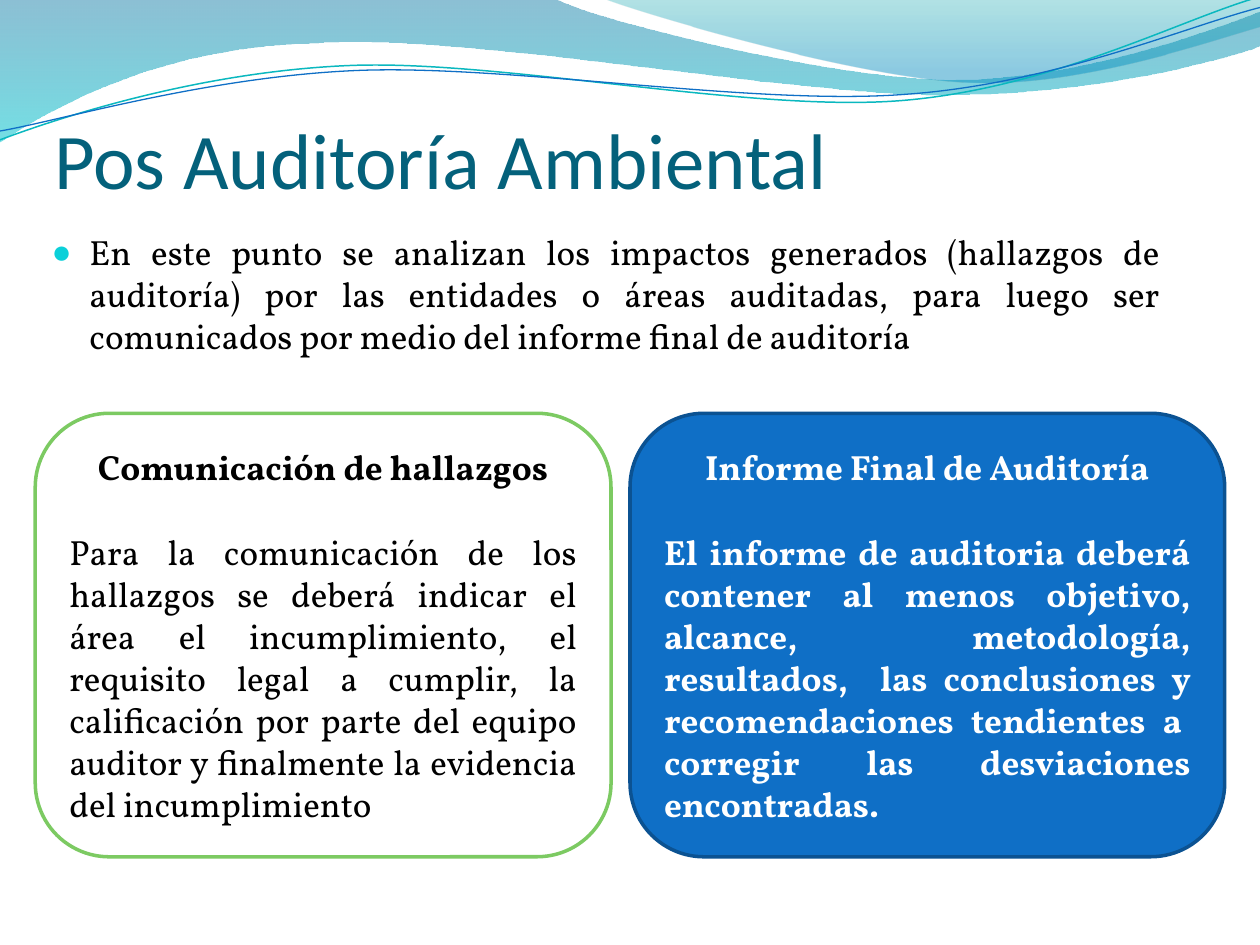
from math import cos, radians, sin
from lxml.etree import SubElement
from pptx import Presentation
from pptx.dml.color import RGBColor
from pptx.enum.shapes import MSO_SHAPE
from pptx.enum.text import MSO_ANCHOR, MSO_AUTO_SIZE, PP_ALIGN
from pptx.oxml.ns import qn
from pptx.util import Inches, Pt

COLORS = {
    "title": "04617B", "text": "000000", "white": "FFFFFF", "bullet": "0BD0D9",
    "green": "7CCA62", "blue": "0F6FC6", "navy": "0B5292", "teal": "0AB8BF",
    "sea": "0074A1", "cyan": "00C6CF", "lagoon": "00A1A9", "sky": "008BBF",
}

# Wave outlines: a start point, then lines (2 numbers) and cubic curves (6 numbers)
BACK_WAVE = [(0, 0), (4.4, -0.01), (4.76, 0.17, 6.64, 0.63, 7.58, 0.63),
             (8.53, 0.63, 9.58, 0.26, 10, 0.09), (10.01, 0.36),
             (9.83, 0.44, 8.7, 0.76, 7.46, 0.75), (6.22, 0.75, 3.82, 0.28, 2.57, 0.34),
             (1.29, 0.36, 0.46, 0.83, -0.01, 1.13), (0, 0)]
FRONT_WAVE = [(4.79, -0.01), (5.09, 0.11, 6.82, 0.62, 7.69, 0.65),
              (8.56, 0.69, 9.61, 0.32, 10, 0.21), (10, 0), (4.79, -0.01)]
TEAL_LINE = [(0, 1.11), (0.48, 0.93, 1.58, 0.57, 2.77, 0.52),
             (3.95, 0.47, 5.93, 0.89, 7.13, 0.8), (8.33, 0.71, 9.38, 0.15, 9.98, -0.02)]
BLUE_LINE = [(0, 1.04), (0.47, 0.96, 1.64, 0.61, 2.83, 0.56),
             (4.03, 0.51, 5.97, 0.84, 7.17, 0.75), (8.36, 0.67, 9.41, 0.21, 10, 0.06)]
TILT = 2.7  # degrees by which the thin lines rise to the right


def rgb(name):
    return RGBColor.from_string(COLORS[name])


def set_attrs(obj, values):
    for name, value in values.items():
        setattr(obj, name, value)


def place(sp, box):
    set_attrs(sp, dict(zip(("left", "top", "width", "height"), map(Inches, box))))


def add_text(p, text, font, size, color, bold=False):
    r = p.add_run()
    r.text = text
    set_attrs(r.font, {"name": font, "size": Pt(size), "bold": bold})
    r.font.color.rgb = rgb(color)


def level(point, center):
    """Turn a point of a tilted line back to the horizontal."""
    a, x, y = radians(TILT), point[0] - center[0], point[1] - center[1]
    return (center[0] + x * cos(a) - y * sin(a), center[1] + x * sin(a) + y * cos(a))


def add_wave(s, origin, segments, center=None):
    """Draw a closed band, or an open tilted line if a center is given."""
    points = [seg[i:i + 2] for seg in segments for i in range(0, len(seg), 2)]
    if center:
        points = [level(point, center) for point in points]
    points = [(Inches(origin[0] + x), Inches(origin[1] + y)) for x, y in points]
    builder = s.shapes.build_freeform(*points[0])
    builder.add_line_segments(points[1:], close=center is None)
    sp = builder.convert_to_shape()
    sp.shadow.inherit = False
    if center:
        sp.rotation = 360 - TILT
    # Join each three control points into one cubic curve
    outline = next(sp._element.iter(qn("a:path")))
    steps = iter(outline.findall(qn("a:lnTo")))
    for seg in segments[1:]:
        step = next(steps)
        if len(seg) == 6:
            curve = SubElement(outline, qn("a:cubicBezTo"))
            step.addprevious(curve)
            for part in (step, next(steps), next(steps)):
                curve.append(part[0])
                outline.remove(part)
    return sp


def add_header(s, origin):
    # Translucent bands, shaded from top to bottom
    bands = [(BACK_WAVE, [(0, "sea", 45), (1, "cyan", 55)]),
             (FRONT_WAVE, [(0, "lagoon", 30), (0.8, "sky", 45)])]
    for segments, stops in bands:
        sp = add_wave(s, origin, segments)
        sp.line.fill.background()
        sp.fill.gradient()
        sp.fill.gradient_angle = 270
        for stop, (position, color, _) in zip(sp.fill.gradient_stops, stops):
            stop.position = position
            stop.color.rgb = rgb(color)
        for clr, (_, _, opacity) in zip(sp._element.spPr.iter(qn("a:srgbClr")), stops):
            SubElement(clr, qn("a:alpha"), val=str(opacity * 1000))
    # Thin lines
    for segments, center, color, width in [(TEAL_LINE, (4.99, 0.57), "teal", 0.85),
                                           (BLUE_LINE, (5, 0.59), "blue", 0.75)]:
        sp = add_wave(s, origin, segments, center)
        sp.fill.background()
        sp.line.color.rgb = rgb(color)
        sp.line.width = Pt(width)


def fill_title(s, box, text):
    sp = s.shapes.title
    s.shapes._spTree.append(sp._element)  # in front of the waves
    place(sp, box)
    tf = sp.text_frame
    set_attrs(tf, {"margin_left": 0, "margin_right": 0, "margin_bottom": 0,
                   "margin_top": Inches(0.05), "auto_size": MSO_AUTO_SIZE.NONE,
                   "vertical_anchor": MSO_ANCHOR.BOTTOM})
    p = tf.paragraphs[0]
    p.alignment = PP_ALIGN.LEFT
    add_text(p, text, "Calibri", 45, "title")


def fill_body(s, box, text):
    sp = s.placeholders[1]
    s.shapes._spTree.append(sp._element)
    place(sp, box)
    tf = sp.text_frame
    tf.auto_size = MSO_AUTO_SIZE.NONE
    p = tf.paragraphs[0]
    set_attrs(p, {"alignment": PP_ALIGN.JUSTIFY, "space_before": Pt(4)})
    pPr = p._p.get_or_add_pPr()
    pPr.set("marL", str(Inches(0.3)))
    pPr.set("indent", str(Inches(-0.3)))
    SubElement(SubElement(pPr, qn("a:buClr")), qn("a:srgbClr"), val=COLORS["bullet"])
    SubElement(pPr, qn("a:buSzPct"), val="95000")
    SubElement(pPr, qn("a:buChar"), char="●")
    add_text(p, text, "Vollkorn", 20, "text")


def add_card(s, box, heading, text, fill, line, color, bold):
    sp = s.shapes.add_shape(MSO_SHAPE.ROUNDED_RECTANGLE, *map(Inches, box))
    sp.shadow.inherit = False
    sp.fill.solid()
    sp.fill.fore_color.rgb = rgb(fill)
    sp.line.color.rgb = rgb(line)
    sp.line.width = Pt(2)
    tf = sp.text_frame
    set_attrs(tf, {"word_wrap": True, "vertical_anchor": MSO_ANCHOR.MIDDLE})
    p = tf.paragraphs[0]
    set_attrs(p, {"alignment": PP_ALIGN.CENTER, "space_after": Pt(24)})
    add_text(p, heading, "Vollkorn", 20, color, True)
    p = tf.add_paragraph()
    p.alignment = PP_ALIGN.JUSTIFY
    add_text(p, text, "Vollkorn", 20, color, bold)


def main():
    prs = Presentation()
    prs.slide_width, prs.slide_height = Inches(10), Inches(7.5)
    s = prs.slides.add_slide(prs.slide_layouts[1])
    add_header(s, (0, 0))
    fill_title(s, (0.43, 0.76, 9, 0.87), "Pos Auditoría Ambiental")
    fill_body(s, (0.31, 1.78, 9, 1.1),
              "En este punto se analizan los impactos generados (hallazgos de auditoría) "
              "por las entidades o áreas auditadas, para luego ser comunicados por medio "
              "del informe final de auditoría")
    add_card(s, (0.28, 3.28, 4.57, 3.52), "Comunicación de hallazgos",
             "Para la comunicación de los hallazgos se deberá indicar el área el "
             "incumplimiento, el requisito legal a cumplir, la calificación por parte del "
             "equipo auditor y finalmente la evidencia del incumplimiento",
             "white", "green", "text", False)
    add_card(s, (5, 3.28, 4.72, 3.52), "Informe Final de Auditoría",
             "El informe de auditoria deberá contener al menos objetivo, alcance, "
             "metodología, resultados,  las conclusiones y recomendaciones  tendientes  a  "
             "corregir las desviaciones encontradas.",
             "blue", "navy", "white", True)
    prs.save("out.pptx")


if __name__ == "__main__":
    main()
